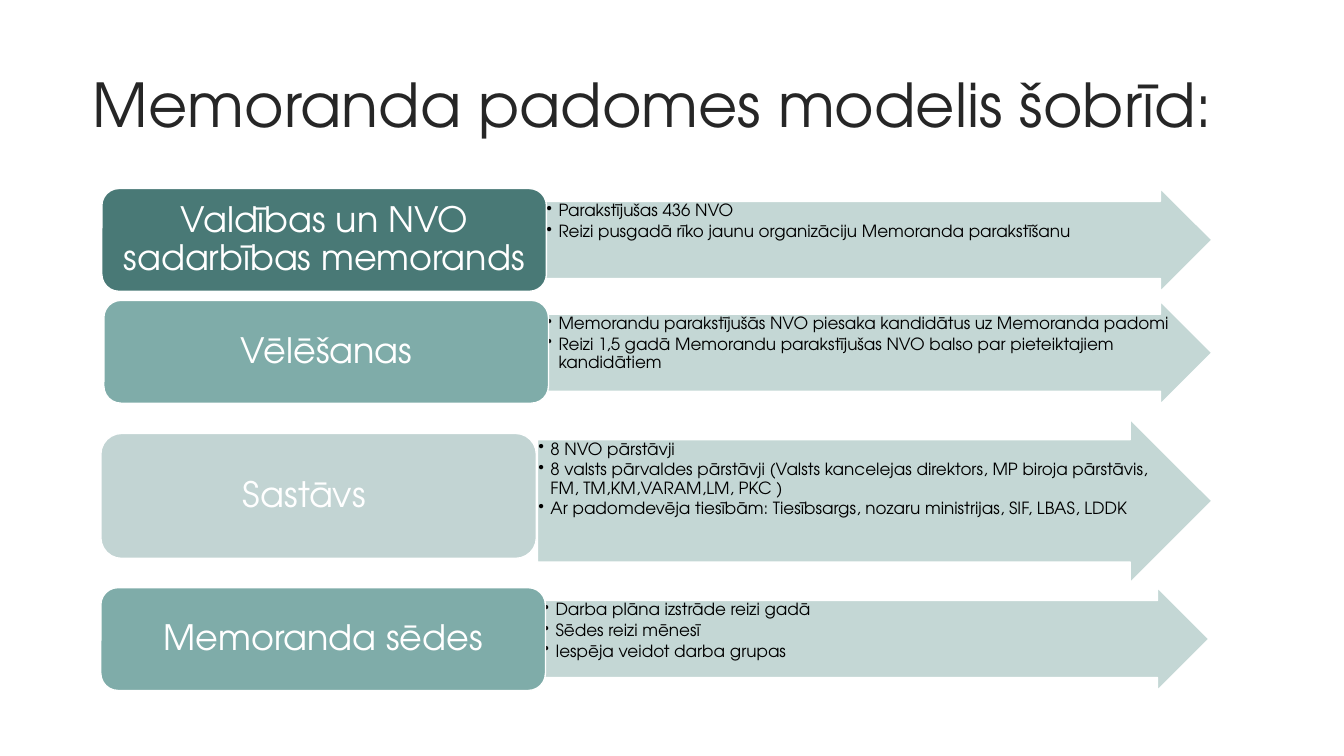
"""Build the slide showing the current model of the Memorandum council."""
from dataclasses import dataclass

from lxml.etree import SubElement
from pptx import Presentation
from pptx.dml.color import RGBColor
from pptx.enum.shapes import MSO_SHAPE
from pptx.enum.text import MSO_ANCHOR, MSO_AUTO_SIZE, PP_ALIGN
from pptx.oxml.ns import qn
from pptx.shapes.autoshape import Shape
from pptx.slide import Slide
from pptx.text.text import _Paragraph
from pptx.util import Inches, Pt


@dataclass(frozen=True)
class Theme:
    """Font, colours and type sizes of the slide."""

    font: str = "TeX Gyre Adventor"
    title_color: str = "262626"
    bullet_color: str = "000000"
    white: str = "FFFFFF"
    arrow_fill: str = "BED3D1"
    dark_teal: str = "497976"
    teal: str = "7FACA9"
    pale_teal: str = "C2D4D3"
    title_size: float = 43.2
    label_size: float = 25
    bullet_size: float = 12


@dataclass(frozen=True)
class Box:
    """Position and size in inches."""

    left: float
    top: float
    width: float
    height: float


@dataclass(frozen=True)
class Row:
    """A labelled box with an arrow of details."""

    label: str
    fill: str
    label_box: Box
    arrow_box: Box
    details: tuple[str, ...]


THEME = Theme()
BULLET_INDENT = Inches(0.12)

ROWS = (
    Row("Valdības un NVO sadarbības memorands", THEME.dark_teal,
        Box(1.01, 1.87, 4.41, 1.02), Box(5.41, 1.87, 6.61, 1.02),
        ("Parakstījušas 436 NVO",
         "Reizi pusgadā rīko jaunu organizāciju Memoranda parakstīšanu")),
    Row("Vēlēšanas", THEME.teal,
        Box(1.03, 2.98, 4.41, 1.02), Box(5.41, 2.99, 6.61, 1.02),
        ("Memorandu parakstījušās NVO piesaka kandidātus uz Memoranda padomi",
         "Reizi 1,5 gadā Memorandu parakstījušas NVO balso par pieteiktajiem kandidātiem")),
    Row("Sastāvs\t", THEME.pale_teal,
        Box(1, 4.3, 4.32, 1.24), Box(5.33, 4.16, 6.69, 1.62),
        ("8 NVO pārstāvji",
         "8 valsts pārvaldes pārstāvji (Valsts kancelejas direktors, MP biroja pārstāvis, "
         "FM, TM,KM,VARAM,LM, PKC )",
         "Ar padomdevēja tiesībām: Tiesībsargs, nozaru ministrijas, SIF, LBAS, LDDK")),
    Row("Memoranda sēdes", THEME.teal,
        Box(1, 5.83, 4.41, 1.02), Box(5.38, 5.83, 6.61, 1.02),
        ("Darba plāna izstrāde reizi gadā",
         "Sēdes reizi mēnesī",
         "Iespēja veidot darba grupas")),
)


def format_paragraph(paragraph: _Paragraph, size: float, color: str, alignment: PP_ALIGN) -> None:
    """Apply the alignment, line spacing and font of a paragraph."""
    paragraph.alignment = alignment
    paragraph.line_spacing = 0.9
    for run in paragraph.runs:
        run.font.name = THEME.font
        run.font.size = Pt(size)
        run.font.color.rgb = RGBColor.from_string(color)


def add_bullet(paragraph: _Paragraph) -> None:
    """Give a paragraph a hanging round bullet."""
    properties = paragraph._p.get_or_add_pPr()
    properties.set("marL", str(BULLET_INDENT))
    properties.set("indent", str(-BULLET_INDENT))
    SubElement(properties, qn("a:buChar")).set("char", "•")


def add_panel(slide: Slide, kind: MSO_SHAPE, box: Box, fill: str) -> Shape:
    """Add a filled shape with a thin white outline."""
    shape = slide.shapes.add_shape(
        kind, Inches(box.left), Inches(box.top), Inches(box.width), Inches(box.height))
    shape.shadow.inherit = False
    shape.fill.solid()
    shape.fill.fore_color.rgb = RGBColor.from_string(fill)
    shape.line.color.rgb = RGBColor.from_string(THEME.white)
    shape.line.width = Pt(1)
    shape.text_frame.word_wrap = True
    return shape


def add_arrow(slide: Slide, row: Row) -> None:
    """Add the translucent arrow holding the details of a row."""
    arrow = add_panel(slide, MSO_SHAPE.RIGHT_ARROW, row.arrow_box, THEME.arrow_fill)
    arrow.adjustments[0] = 0.75
    arrow.adjustments[1] = 0.5
    color = arrow._element.spPr.find(qn("a:solidFill")).find(qn("a:srgbClr"))
    SubElement(color, qn("a:alpha")).set("val", "90000")
    text_frame = arrow.text_frame
    text_frame.vertical_anchor = MSO_ANCHOR.TOP
    text_frame.margin_left = text_frame.margin_right = Inches(0.01)
    text_frame.margin_top = text_frame.margin_bottom = Inches(0.01)
    text_frame.text = "\n".join(row.details)
    for paragraph in text_frame.paragraphs:
        format_paragraph(paragraph, THEME.bullet_size, THEME.bullet_color, PP_ALIGN.LEFT)
        paragraph.space_after = Pt(1.8)
        add_bullet(paragraph)


def add_label(slide: Slide, row: Row) -> None:
    """Add the rounded box naming a row."""
    label = add_panel(slide, MSO_SHAPE.ROUNDED_RECTANGLE, row.label_box, row.fill)
    label.text_frame.vertical_anchor = MSO_ANCHOR.MIDDLE
    label.text_frame.text = row.label
    format_paragraph(
        label.text_frame.paragraphs[0], THEME.label_size, THEME.white, PP_ALIGN.CENTER)


def set_title(slide: Slide, text: str) -> None:
    """Place and format the title placeholder."""
    title = slide.shapes.title
    title.left, title.top = Inches(0.82), Inches(0.7)
    title.width, title.height = Inches(11.69), Inches(0.75)
    text_frame = title.text_frame
    text_frame.text = text
    text_frame.word_wrap = True
    text_frame.auto_size = MSO_AUTO_SIZE.NONE
    text_frame.vertical_anchor = MSO_ANCHOR.MIDDLE
    format_paragraph(
        text_frame.paragraphs[0], THEME.title_size, THEME.title_color, PP_ALIGN.LEFT)


def main() -> None:
    """Build and save the presentation."""
    presentation = Presentation()
    presentation.slide_width = Inches(13.33)
    presentation.slide_height = Inches(7.5)
    slide = presentation.slides.add_slide(presentation.slide_layouts.get_by_name("Title Only"))
    set_title(slide, "Memoranda padomes modelis šobrīd:")
    for row in ROWS:
        add_arrow(slide, row)
        add_label(slide, row)
    presentation.save("out.pptx")


if __name__ == "__main__":
    main()
